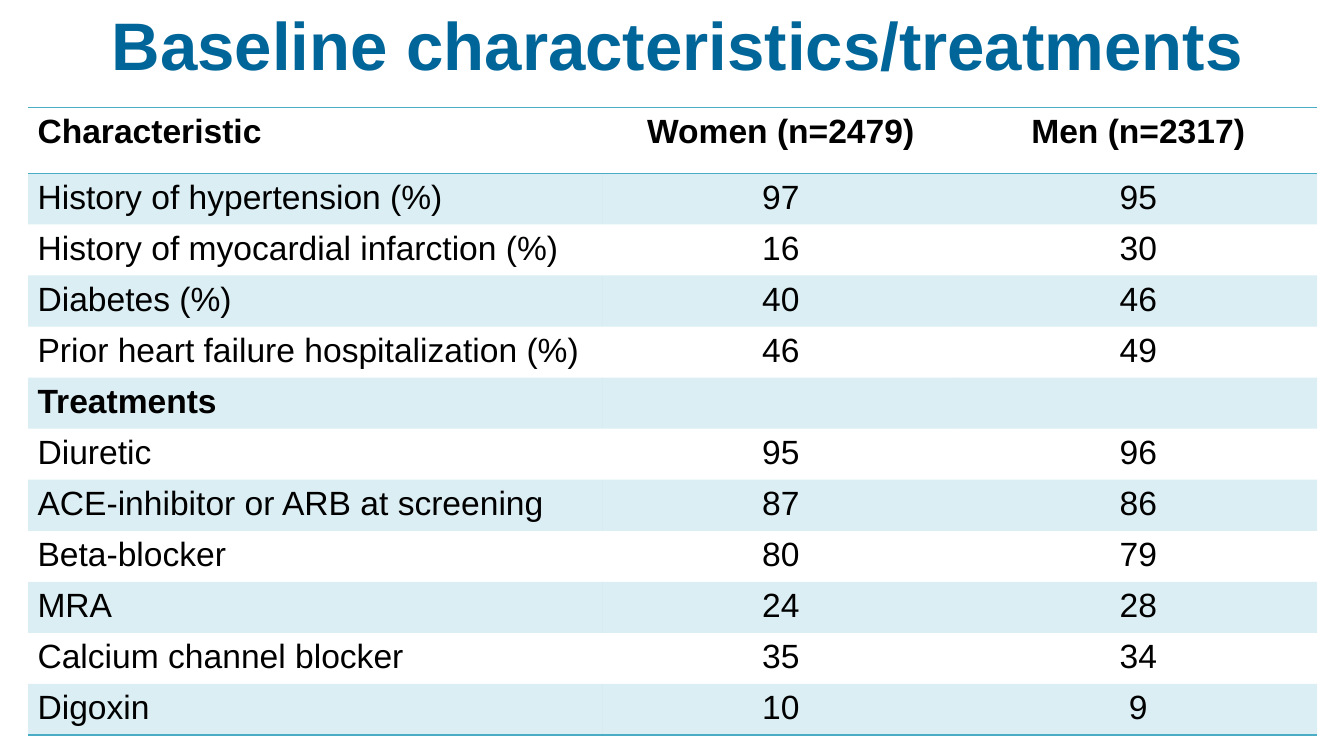
from lxml.etree import SubElement
from pptx import Presentation
from pptx.dml.color import RGBColor
from pptx.enum.text import MSO_ANCHOR, PP_ALIGN
from pptx.oxml.ns import qn
from pptx.util import Inches, Pt

FONT = "Arial"
COLORS = {"title": "006699", "text": "000000", "accent": "4BACC6"}
NO_STYLE = "{2D5ABB26-0587-4C30-8999-92F81FD0307C}"
WIDTHS = [4.27, 2.66, 2.66]
HEIGHT, HEAD_H = 4.65, 0.49

ROWS = [
    ("Characteristic", "Women (n=2479)", "Men (n=2317)"),
    ("History of hypertension (%)", "97", "95"),
    ("History of myocardial infarction (%)", "16", "30"),
    ("Diabetes (%)", "40", "46"),
    ("Prior heart failure hospitalization (%)", "46", "49"),
    ("Treatments", "", ""),
    ("Diuretic", "95", "96"),
    ("ACE-inhibitor or ARB at screening", "87", "86"),
    ("Beta-blocker", "80", "79"),
    ("MRA", "24", "28"),
    ("Calcium channel blocker", "35", "34"),
    ("Digoxin", "10", "9"),
]


def set_text(frame, text, size, color, bold, align):
    frame.text = text
    para = frame.paragraphs[0]
    para.alignment = align
    for run in para.runs:
        run.font.name = FONT
        run.font.size = Pt(size)
        run.font.bold = bold
        run.font.color.rgb = RGBColor.from_string(COLORS[color])


def add_title(slide, text):
    box = slide.shapes.add_textbox(Inches(0.54), 0, Inches(9), Inches(0.65))
    frame = box.text_frame
    frame.word_wrap = True
    frame.vertical_anchor = MSO_ANCHOR.MIDDLE
    set_text(frame, text, 36, "title", True, PP_ALIGN.CENTER)


def add_rule(cell, side):
    line = SubElement(cell._tc.get_or_add_tcPr(), qn("a:" + side), w=str(Pt(1)))
    fill = SubElement(line, qn("a:solidFill"))
    SubElement(fill, qn("a:srgbClr"), val=COLORS["accent"])


def tint(cell):
    cell.fill.solid()
    cell.fill.fore_color.rgb = RGBColor.from_string(COLORS["accent"])
    color = cell._tc.tcPr.find(qn("a:solidFill")).find(qn("a:srgbClr"))
    SubElement(color, qn("a:alpha"), val="20000")


def fill_cell(cell, text, row, col):
    cell.margin_left = cell.margin_right = Inches(0.07)
    cell.margin_top = cell.margin_bottom = Inches(0.04)
    align = PP_ALIGN.CENTER if col else PP_ALIGN.LEFT
    bold = row == 0 or text == "Treatments"
    set_text(cell.text_frame, text, 18, "text", bold, align)

    # Rules come before the fill in the cell properties
    if row == 0:
        add_rule(cell, "lnT")
    if row in (0, len(ROWS) - 1):
        add_rule(cell, "lnB")
    if row % 2:
        tint(cell)
    else:
        cell.fill.background()


def add_grid(slide):
    frame = slide.shapes.add_table(len(ROWS), len(WIDTHS), Inches(0.21), Inches(0.8),
                                   Inches(sum(WIDTHS)), Inches(HEIGHT))
    table = frame.table
    table.first_row = table.horz_banding = False
    table._tbl.tblPr.find(qn("a:tableStyleId")).text = NO_STYLE
    for col, width in enumerate(WIDTHS):
        table.columns[col].width = Inches(width)
    row_h = (HEIGHT - HEAD_H) / (len(ROWS) - 1)
    for row, texts in enumerate(ROWS):
        table.rows[row].height = Inches(row_h if row else HEAD_H)
        for col, text in enumerate(texts):
            fill_cell(table.cell(row, col), text, row, col)


def main():
    deck = Presentation()
    # Widescreen, 16 to 9
    deck.slide_width = Inches(10)
    deck.slide_height = Inches(10 * 9 / 16)
    slide = deck.slides.add_slide(deck.slide_layouts[6])
    # Heading
    add_title(slide, "Baseline characteristics/treatments")
    # Patient table
    add_grid(slide)
    deck.save("out.pptx")


if __name__ == "__main__":
    main()
